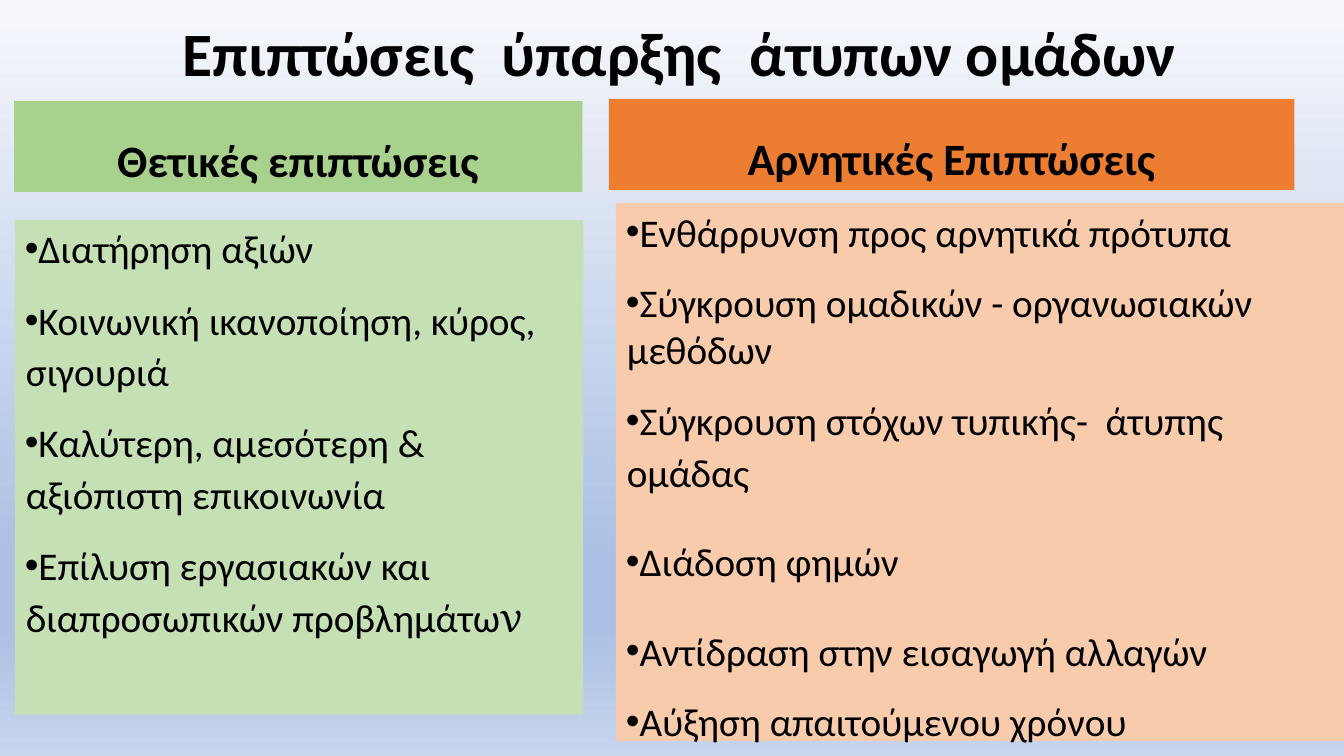
from dataclasses import dataclass

from lxml import etree
from pptx import Presentation
from pptx.dml.color import RGBColor
from pptx.enum.text import MSO_ANCHOR, PP_ALIGN
from pptx.oxml.ns import qn
from pptx.util import Pt

TOP, MIDDLE, BOTTOM = MSO_ANCHOR.TOP, MSO_ANCHOR.MIDDLE, MSO_ANCHOR.BOTTOM
CENTER, LEFT = PP_ALIGN.CENTER, PP_ALIGN.LEFT

BLACK = RGBColor(0x00, 0x00, 0x00)
GREEN = RGBColor(0xA9, 0xD1, 0x8E)
PALE_GREEN = RGBColor(0xC5, 0xE0, 0xB4)
ORANGE = RGBColor(0xED, 0x7D, 0x31)
PALE_ORANGE = RGBColor(0xF8, 0xCB, 0xAD)
SKY = RGBColor(0xF6, 0xF8, 0xFC)
BLUE = RGBColor(0xAB, 0xC0, 0xE4)
PALE_BLUE = RGBColor(0xC7, 0xD5, 0xED)
BACKGROUND_STOPS = ((0, SKY), (74, BLUE), (83, BLUE), (100, PALE_BLUE))

BODY_FONT, ENDING_FONT = "Calibri", "Cambria"


@dataclass(frozen=True)
class Item:
    text: str
    line_spacing: float = 1.0
    space_before: float = 0
    ending: str = ""  # last letters, set in ENDING_FONT


@dataclass(frozen=True)
class Panel:
    left: float
    top: float
    width: float
    height: float
    items: tuple[Item, ...]
    size: float
    fill: RGBColor | None = None
    anchor: MSO_ANCHOR = TOP
    bulleted: bool = False


def heading(left: float, top: float, width: float, text: str, fill: RGBColor) -> Panel:
    return Panel(left, top, width, 65, (Item(text, 0.9),), 32, fill, BOTTOM)


PANELS = (
    Panel(71.5, 0, 828, 81, (Item("Επιπτώσεις  ύπαρξης  άτυπων ομάδων", 0.9),), 44,
          anchor=MIDDLE),
    heading(10, 72, 406, "Θετικές επιπτώσεις", GREEN),
    Panel(10.6, 157, 406, 353.5, (
        Item("Διατήρηση αξιών"),
        Item("Κοινωνική ικανοποίηση, κύρος, σιγουριά", 1.1, 13.9),
        Item("Καλύτερη, αμεσότερη & αξιόπιστη επικοινωνία", 1.1, 13.7),
        Item("Επίλυση εργασιακών και διαπροσωπικών προβλημάτω", 1.1, 13.9, "ν"),
    ), 28, PALE_GREEN, bulleted=True),
    heading(435, 70.6, 489.6, "Αρνητικές Επιπτώσεις", ORANGE),
    Panel(440, 145, 520, 384.5, (
        Item("Ενθάρρυνση προς αρνητικά πρότυπα"),
        Item("Σύγκρουση ομαδικών - οργανωσιακών μεθόδων", 1.0, 16.6),
        Item("Σύγκρουση στόχων τυπικής-  άτυπης ομάδας", 1.1, 13.9),
        Item("Διάδοση φημών", 1.6, 10),
        Item("Αντίδραση στην εισαγωγή αλλαγών", 1.6, 10),
        Item("Αύξηση απαιτούμενου χρόνου", 1.0, 16.6),
    ), 28, PALE_ORANGE, bulleted=True),
)


def paint_background(page) -> None:
    fill = page.background.fill
    fill.gradient()
    fill.gradient_angle = 270
    stops = page.element.find(".//" + qn("a:gsLst"))
    for stop in list(stops):
        stops.remove(stop)
    for percent, color in BACKGROUND_STOPS:
        stop = etree.SubElement(stops, qn("a:gs"), pos=str(percent * 1000))
        etree.SubElement(stop, qn("a:srgbClr"), val=str(color))


def add_bullet(para) -> None:
    properties = para._p.get_or_add_pPr()
    properties.set("marL", str(Pt(0.72)))
    properties.set("indent", str(Pt(-18)))
    etree.SubElement(properties, qn("a:buFont"), typeface="Arial")
    etree.SubElement(properties, qn("a:buChar"), char="•")


def add_span(para, text: str, font_name: str, panel: Panel) -> None:
    span = para.add_run()
    span.text = text
    span.font.color.rgb = BLACK
    font_format = {"name": font_name, "size": Pt(panel.size), "bold": not panel.bulleted}
    for name, value in font_format.items():
        setattr(span.font, name, value)


def add_item(para, item: Item, panel: Panel) -> None:
    if panel.bulleted:
        add_bullet(para)
    para_format = {
        "alignment": LEFT if panel.bulleted else CENTER,
        "line_spacing": item.line_spacing,
        "space_before": Pt(item.space_before),
    }
    for name, value in para_format.items():
        setattr(para, name, value)
    add_span(para, item.text, BODY_FONT, panel)
    if item.ending:
        add_span(para, item.ending, ENDING_FONT, panel)


def add_panel(page, panel: Panel) -> None:
    box = page.shapes.add_textbox(
        Pt(panel.left), Pt(panel.top), Pt(panel.width), Pt(panel.height))
    if panel.fill is not None:
        box.fill.solid()
        box.fill.fore_color.rgb = panel.fill
    frame = box.text_frame
    frame.word_wrap = True
    frame.vertical_anchor = panel.anchor
    for index, item in enumerate(panel.items):
        para = frame.add_paragraph() if index else frame.paragraphs[0]
        add_item(para, item, panel)


def main() -> None:
    deck = Presentation()
    deck.slide_width, deck.slide_height = Pt(960), Pt(540)
    page = deck.slides.add_slide(deck.slide_layouts[6])
    paint_background(page)
    for panel in PANELS:
        add_panel(page, panel)
    deck.save("out.pptx")


if __name__ == "__main__":
    main()
